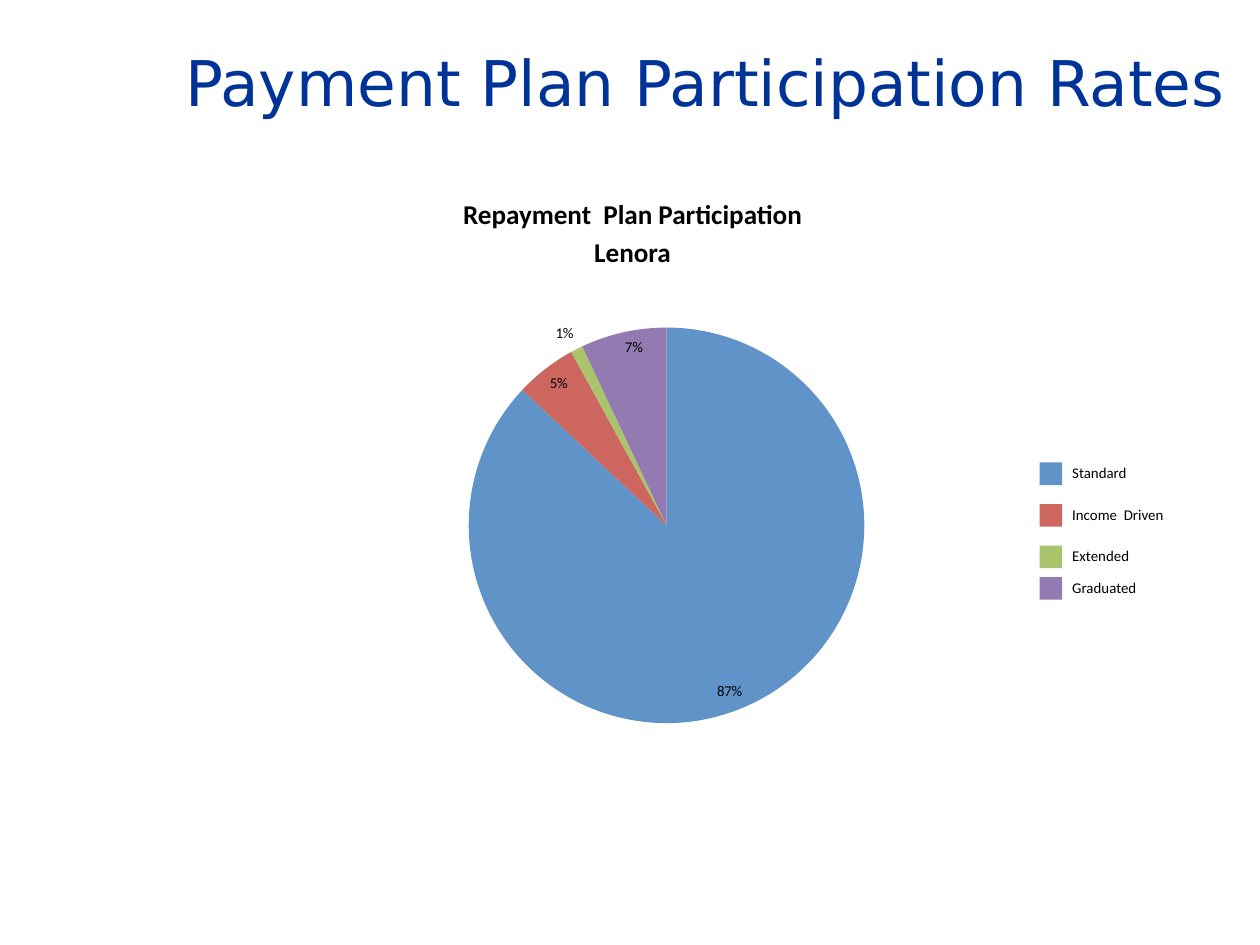
from dataclasses import dataclass

from lxml import etree
from pptx import Presentation
from pptx.chart.data import CategoryChartData
from pptx.dml.color import RGBColor
from pptx.enum.chart import XL_CHART_TYPE, XL_LABEL_POSITION
from pptx.enum.shapes import MSO_SHAPE
from pptx.enum.text import MSO_ANCHOR, PP_ALIGN
from pptx.util import Inches, Pt

PIE = XL_CHART_TYPE.PIE
INSIDE_END = XL_LABEL_POSITION.INSIDE_END
OUTSIDE_END = XL_LABEL_POSITION.OUTSIDE_END
RECTANGLE = MSO_SHAPE.RECTANGLE
TOP, MIDDLE = MSO_ANCHOR.TOP, MSO_ANCHOR.MIDDLE
LEFT, CENTER = PP_ALIGN.LEFT, PP_ALIGN.CENTER


@dataclass(frozen=True)
class Theme:
    """Colours, fonts and type sizes of the slide."""

    title_font: str = "DejaVu Sans"
    body_font: str = "Calibri"
    title_color: str = "003398"
    text_color: str = "000000"
    title_size: float = 36
    heading_size: float = 15.5
    label_size: float = 8.5


THEME = Theme()
WIDTH, HEIGHT = 10, 7.5
PLANS = [
    ("Standard", 0.87, "6094C9", INSIDE_END),
    ("Income  Driven", 0.05, "CD665F", INSIDE_END),
    ("Extended", 0.01, "AAC46B", OUTSIDE_END),
    ("Graduated", 0.07, "937AB1", INSIDE_END),
]
PIE_LEFT, PIE_TOP, PIE_SIZE = 3.72, 2.6, 3.14
CHART_SIZE = 4
KEY_LEFT, KEY_SIZE = 8.25, 0.18
KEY_TOPS = [3.67, 4, 4.33, 4.58]
LABEL_LEFT = 8.51


def style_font(font, name, size, color, bold=False):
    """Set the typeface, size and colour of a font."""
    font.name, font.size, font.bold = name, Pt(size), bold
    font.color.rgb = RGBColor.from_string(color)


def add_text(slide, box, lines, font, align=LEFT, anchor=TOP, spacing=None):
    """Add a text box without margins, one paragraph for each line."""
    frame = slide.shapes.add_textbox(*map(Inches, box)).text_frame
    frame.word_wrap = True
    frame.vertical_anchor = anchor
    frame.margin_left = frame.margin_right = 0
    frame.margin_top = frame.margin_bottom = 0
    for index, line in enumerate(lines):
        paragraph = frame.add_paragraph() if index else frame.paragraphs[0]
        paragraph.alignment = align
        if spacing:
            paragraph.line_spacing = Pt(spacing)
        run = paragraph.add_run()
        run.text = line
        style_font(run.font, *font)


def place_plot(chart, offset, share):
    """Fix the inner plot area as shares of the chart frame."""
    plot_area = chart.plots[0]._element.getparent()
    namespace = etree.QName(plot_area).namespace
    for old in plot_area.findall(f"{{{namespace}}}layout"):
        plot_area.remove(old)
    layout = etree.Element(f"{{{namespace}}}layout")
    manual = etree.SubElement(layout, f"{{{namespace}}}manualLayout")
    settings = {"layoutTarget": "inner", "xMode": "edge", "yMode": "edge",
                "x": offset, "y": offset, "w": share, "h": share}
    for tag, value in settings.items():
        etree.SubElement(manual, f"{{{namespace}}}{tag}", val=str(value))
    plot_area.insert(0, layout)


def add_pie(slide):
    """Add the pie chart with one colour and one label position per plan."""
    data = CategoryChartData(number_format="0%")
    data.categories = [name for name, *_ in PLANS]
    data.add_series("Participation", [share for _, share, *_ in PLANS])
    margin = (CHART_SIZE - PIE_SIZE) / 2
    box = (PIE_LEFT - margin, PIE_TOP - margin, CHART_SIZE, CHART_SIZE)
    chart = slide.shapes.add_chart(PIE, *map(Inches, box), data).chart
    chart.has_title = chart.has_legend = False
    style_font(chart.font, THEME.body_font, THEME.label_size, THEME.text_color)
    place_plot(chart, margin / CHART_SIZE, PIE_SIZE / CHART_SIZE)
    plot = chart.plots[0]
    plot.vary_by_categories = True
    series = plot.series[0]
    labels = series.data_labels
    labels.show_value = True
    labels.number_format, labels.number_format_is_linked = "0%", False
    labels.position = INSIDE_END
    for index, (_, _, color, position) in enumerate(PLANS):
        point = series.points[index]
        point.format.fill.solid()
        point.format.fill.fore_color.rgb = RGBColor.from_string(color)
        point.format.line.fill.background()
        if position != INSIDE_END:
            point.data_label.position = position


def add_legend_entry(slide, top, name, color):
    """Add a colour key and the name of its plan."""
    key = slide.shapes.add_shape(
        RECTANGLE, *map(Inches, (KEY_LEFT, top, KEY_SIZE, KEY_SIZE)))
    key.shadow.inherit = False
    key.fill.solid()
    key.fill.fore_color.rgb = RGBColor.from_string(color)
    key.line.fill.background()
    add_text(slide, (LABEL_LEFT, top - 0.01, 1.2, KEY_SIZE), [name],
             (THEME.body_font, THEME.label_size, THEME.text_color),
             anchor=MIDDLE)


def main():
    """Build the slide and save it."""
    presentation = Presentation()
    presentation.slide_width = Inches(WIDTH)
    presentation.slide_height = Inches(HEIGHT)
    slide = presentation.slides.add_slide(presentation.slide_layouts[6])
    add_text(slide, (1.47, 0.42, 8.5, 0.53),
             ["Payment Plan Participation Rates"],
             (THEME.title_font, THEME.title_size, THEME.title_color),
             spacing=38)
    add_text(slide, (3.22, 1.53, 3.6, 0.6),
             ["Repayment  Plan Participation", "Lenora"],
             (THEME.body_font, THEME.heading_size, THEME.text_color, True),
             align=CENTER, spacing=21.5)
    add_pie(slide)
    for top, (name, _, color, _) in zip(KEY_TOPS, PLANS):
        add_legend_entry(slide, top, name, color)
    presentation.save("out.pptx")


if __name__ == "__main__":
    main()
